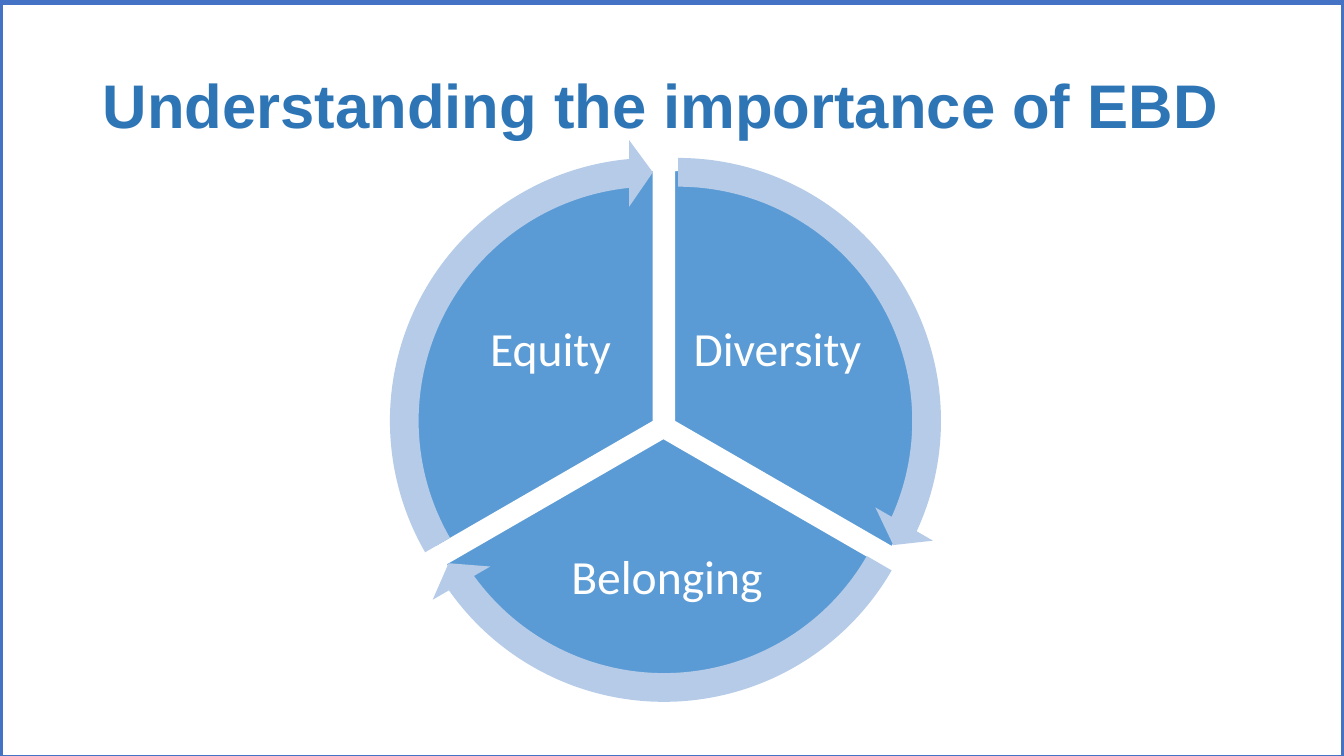
from pptx import Presentation
from pptx.dml.color import RGBColor
from pptx.enum.shapes import MSO_SHAPE as Shape
from pptx.enum.text import MSO_ANCHOR as Anchor, PP_ALIGN as Align
from pptx.util import Inches, Pt

COLORS = {
    "border": "4472C4",
    "title": "2E75B6",
    "segment": "5B9BD5",
    "arrow": "B5CBE7",
    "white": "FFFFFF",
}
PIE_SIZE = 4.98
ARROW_SIZE = 5.59
ARROW_THICKNESS, HEAD_ANGLE, HEAD_WIDTH = 0.051, 3.275, 0.059


def add_shape(kind, box, adjustments=(), fill=None, line=None, width=1):
    shape = slide.shapes.add_shape(kind, *map(Inches, box))
    shape.shadow.inherit = False
    for index, value in enumerate(adjustments):
        shape.adjustments[index] = value
    if fill:
        shape.fill.solid()
        shape.fill.fore_color.rgb = RGBColor.from_string(COLORS[fill])
    else:
        shape.fill.background()
    if line:
        shape.line.color.rgb = RGBColor.from_string(COLORS[line])
        shape.line.width = Pt(width)
    else:
        shape.line.fill.background()


def add_text(text, box, color, align, inset, font_format):
    frame = slide.shapes.add_textbox(*map(Inches, box)).text_frame
    frame.word_wrap = True
    frame.vertical_anchor = Anchor.MIDDLE
    frame.margin_left = frame.margin_right = Inches(inset)
    frame.margin_top = frame.margin_bottom = Inches(0.05)
    paragraph = frame.paragraphs[0]
    paragraph.alignment = align
    paragraph.line_spacing = 0.9
    run = paragraph.add_run()
    run.text = text
    run.font.color.rgb = RGBColor.from_string(COLORS[color])
    for name, value in font_format.items():
        setattr(run.font, name, value)


deck = Presentation()
deck.slide_width, deck.slide_height = Inches(13.33), Inches(7.5)
slide = deck.slides.add_slide(deck.slide_layouts[6])

add_shape(Shape.RECTANGLE, (0, 0.02, 13.33, 7.5), line="border", width=4.5)
add_text("Understanding the importance of EBD", (0.92, 0.35, 11.5, 1.45),
         "title", Align.LEFT, 0.1,
         {"name": "Arial", "size": Pt(44), "bold": True})

# Label, label box, pie corner, arrow corner, start and end angle (0.6° units)
segments = [
    ("Diversity", (6.82, 2.74, 1.78, 1.48), (4.2, 1.69), (3.93, 1.38), 162, 18),
    ("Belonging", (5.28, 5.09, 2.67, 1.3), (4.09, 1.86), (3.79, 1.56), 18, 90),
    ("Equity", (4.57, 2.74, 1.78, 1.48), (3.99, 1.69), (3.68, 1.38), 90, 162),
]
for label, label_box, pie_corner, _, start, end in segments:
    add_shape(Shape.PIE, (*pie_corner, PIE_SIZE, PIE_SIZE), (start, end),
              fill="segment", line="white")
    add_text(label, label_box, "white", Align.CENTER, 0.05,
             {"name": "Calibri", "size": Pt(34)})

for _, _, _, arrow_corner, start, end in segments:
    add_shape(Shape.CIRCULAR_ARROW, (*arrow_corner, ARROW_SIZE, ARROW_SIZE),
              (ARROW_THICKNESS, HEAD_ANGLE, end - HEAD_ANGLE, start, HEAD_WIDTH),
              fill="arrow")

deck.save("out.pptx")
